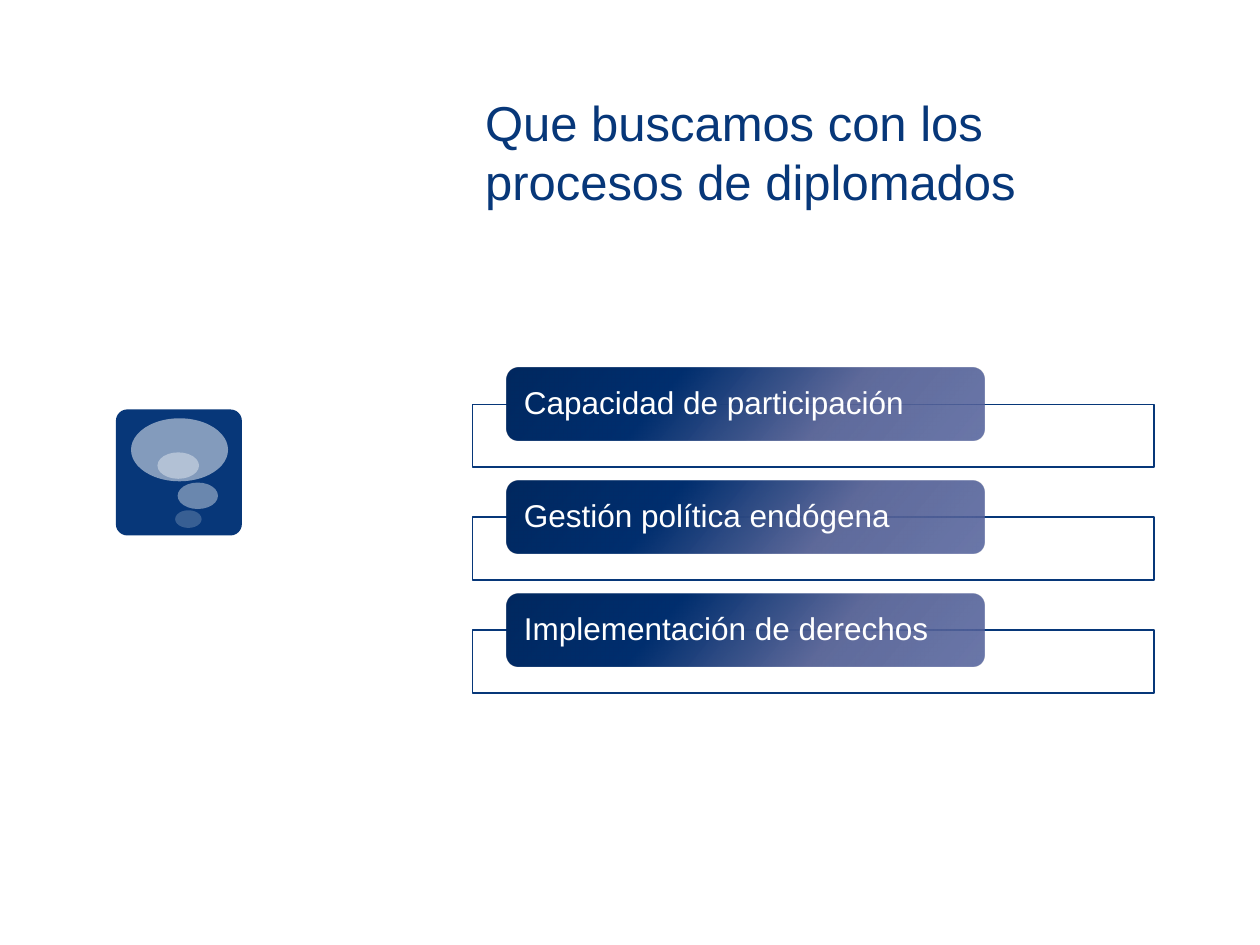
from lxml.etree import SubElement
from pptx import Presentation
from pptx.dml.color import RGBColor
from pptx.enum.shapes import MSO_SHAPE
from pptx.enum.text import MSO_ANCHOR, PP_ALIGN
from pptx.oxml import parse_xml
from pptx.oxml.ns import nsdecls, qn
from pptx.util import Inches, Pt

NAVY = RGBColor(0x07, 0x37, 0x79)
WHITE = RGBColor(0xFF, 0xFF, 0xFF)
# position %, colour, opacity %
PILL_STOPS = [
    (0, RGBColor(0x52, 0x61, 0x9B), 85),
    (33, RGBColor(0x57, 0x63, 0x96), 95),
    (67, RGBColor(0x00, 0x2E, 0x6E), 100),
    (100, RGBColor(0x00, 0x28, 0x5F), 100),
]
PILL_ANGLE = 220

COL_LEFT, COL_WIDTH = 3.75, 5.41
PILL_LEFT, PILL_WIDTH, PILL_HEIGHT = COL_LEFT + 0.27, 3.79, 0.58
FIRST_ROW, ROW_PITCH = 2.92, 0.895
FRAME_DROP, FRAME_HEIGHT = PILL_HEIGHT / 2, 0.5


def add_filled(shapes, kind, box, color=None, opacity=100):
    """Add a borderless shape; box is left, top, width, height in inches."""
    sp = shapes.add_shape(kind, *[Inches(v) for v in box])
    sp.shadow.inherit = False
    sp.line.fill.background()
    if color is not None:
        sp.fill.solid()
        sp.fill.fore_color.rgb = color
        if opacity < 100:
            clr = sp.fill._xPr.find(qn("a:solidFill"))[0]
            SubElement(clr, qn("a:alpha"), val=str(opacity * 1000))
    return sp


def format_text(tf, text, size, color, **frame):
    for name, value in frame.items():
        setattr(tf, name, value)
    p = tf.paragraphs[0]
    p.alignment = PP_ALIGN.LEFT
    r = p.add_run()
    r.text = text
    r.font.name, r.font.size = "Arial", Pt(size)
    r.font.color.rgb = color
    return p


prs = Presentation()
prs.slide_width, prs.slide_height = Inches(10), Inches(7.5)
s = prs.slides.add_slide(prs.slide_layouts[5])

# Speech bubble icon
icon = s.shapes.add_group_shape()
tile = add_filled(icon.shapes, MSO_SHAPE.ROUNDED_RECTANGLE, (0.92, 3.25, 1, 1), NAVY)
tile.adjustments[0] = 0.09
for box, opacity in [
    ((1.04, 3.32, 0.77, 0.5), 50),
    ((1.41, 3.83, 0.32, 0.21), 40),
    ((1.39, 4.05, 0.21, 0.14), 20),
    ((1.25, 3.59, 0.33, 0.21), 38),
]:
    add_filled(icon.shapes, MSO_SHAPE.OVAL, box, WHITE, opacity)

# Title
title = s.shapes.title
title.left, title.top = Inches(COL_LEFT), Inches(0.75)
title.width, title.height = Inches(COL_WIDTH), Inches(0.97)
format_text(title.text_frame, "Que buscamos con los procesos de diplomados", 28, NAVY,
            vertical_anchor=MSO_ANCHOR.BOTTOM, word_wrap=True)

# Goals: a gradient pill over the top edge of each frame
stops = "".join(
    f'<a:gs pos="{pos * 1000}"><a:srgbClr val="{color}">'
    f'<a:alpha val="{opacity * 1000}"/></a:srgbClr></a:gs>'
    for pos, color, opacity in PILL_STOPS
)
pill_fill = (
    f'<a:gradFill {nsdecls("a")} rotWithShape="1"><a:gsLst>{stops}</a:gsLst>'
    f'<a:lin ang="{PILL_ANGLE * 60000}" scaled="0"/></a:gradFill>'
)
goals = ["Capacidad de participación", "Gestión política endógena",
         "Implementación de derechos"]
diagram = s.shapes.add_group_shape()
for row, goal in enumerate(goals):
    top = FIRST_ROW + row * ROW_PITCH
    frame = add_filled(diagram.shapes, MSO_SHAPE.RECTANGLE,
                       (COL_LEFT, top + FRAME_DROP, COL_WIDTH, FRAME_HEIGHT), WHITE, 90)
    frame.line.color.rgb = NAVY
    frame.line.width = Pt(1)

    pill = add_filled(diagram.shapes, MSO_SHAPE.ROUNDED_RECTANGLE,
                      (PILL_LEFT, top, PILL_WIDTH, PILL_HEIGHT))
    pill._element.spPr.find(qn("a:prstGeom")).addnext(parse_xml(pill_fill))
    p = format_text(pill.text_frame, goal, 18, WHITE,
                    vertical_anchor=MSO_ANCHOR.MIDDLE, word_wrap=True,
                    margin_left=Inches(0.11), margin_right=Inches(0.11),
                    margin_top=0, margin_bottom=0)
    p.line_spacing = 0.9

prs.save("out.pptx")
